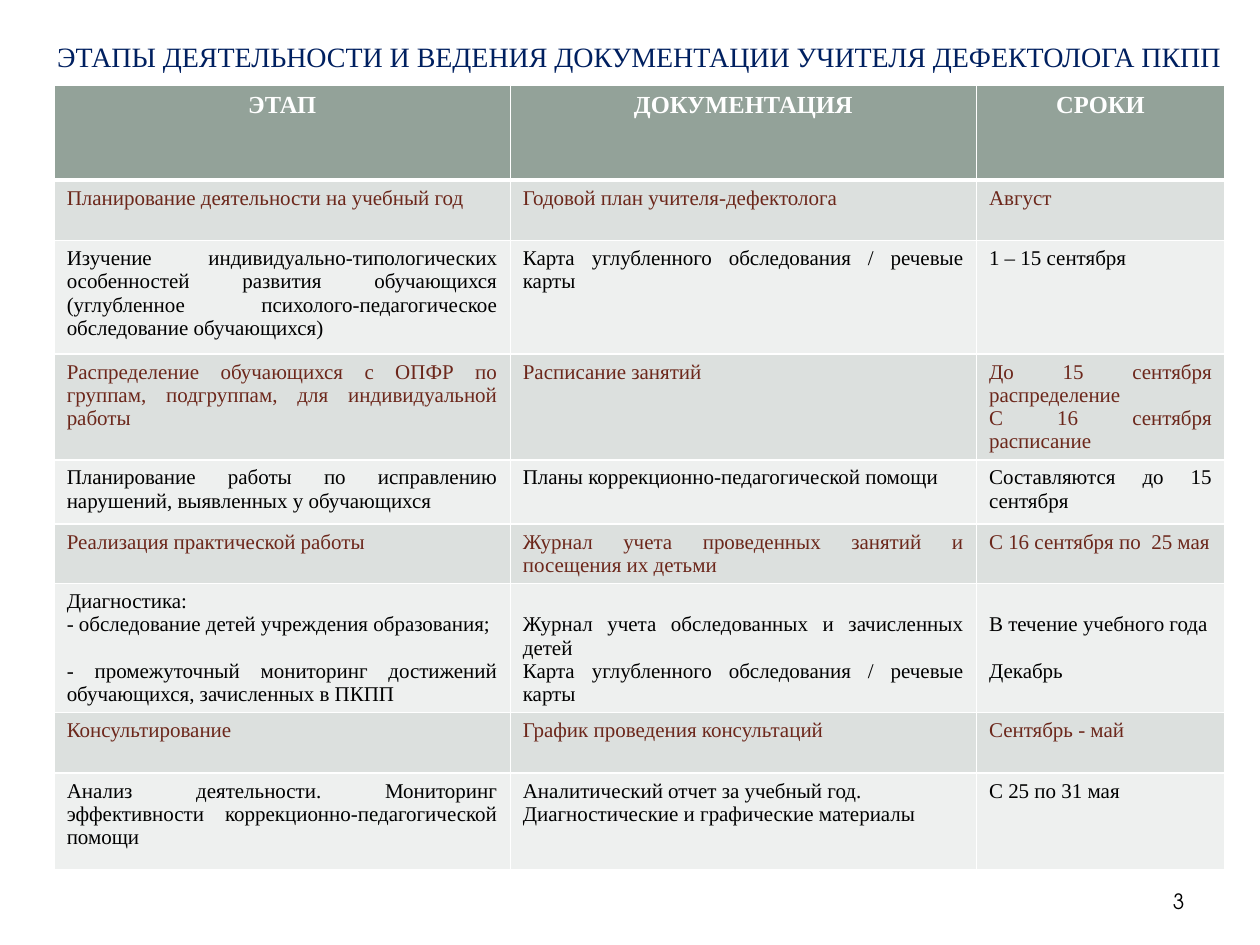
import pptx
import pptx.util
import pptx.dml.color
import pptx.enum.text
import pptx.oxml
import pptx.oxml.ns

Inches, Pt = pptx.util.Inches, pptx.util.Pt
RGBColor = pptx.dml.color.RGBColor
ALIGN = pptx.enum.text.PP_ALIGN
MIDDLE = pptx.enum.text.MSO_ANCHOR.MIDDLE

NAVY = RGBColor(0x00, 0x20, 0x60)
BLACK = RGBColor(0x00, 0x00, 0x00)
WHITE = RGBColor(0xFF, 0xFF, 0xFF)
BROWN = RGBColor(0x6C, 0x27, 0x1B)
SAGE = RGBColor(0x93, 0xA2, 0x99)
BAND_DARK = RGBColor(0xDC, 0xE0, 0xDE)
BAND_LIGHT = RGBColor(0xEE, 0xF0, 0xEF)
SERIF, SANS = "Times New Roman", "TeX Gyre Adventor"

# Content: each cell is a list of lines, GAP marks one line of empty space
GAP = None
TITLE = "ЭТАПЫ ДЕЯТЕЛЬНОСТИ И ВЕДЕНИЯ ДОКУМЕНТАЦИИ УЧИТЕЛЯ ДЕФЕКТОЛОГА ПКПП"
PAGE = "3"
COL_WIDTHS = [3.62, 3.7, 1.97]
ROWS = [  # height, cells
    (0.75, [["ЭТАП"], ["ДОКУМЕНТАЦИЯ"], ["СРОКИ"]]),
    (0.48, [["Планирование деятельности на учебный год"],
            ["Годовой план учителя-дефектолога"],
            ["Август"]]),
    (0.9, [["Изучение индивидуально-типологических особенностей развития обучающихся "
            "(углубленное психолого-педагогическое обследование обучающихся)"],
           ["Карта углубленного обследования / речевые карты"],
           ["1 – 15 сентября"]]),
    (0.7, [["Распределение обучающихся с ОПФР по группам, подгруппам, "
            "для индивидуальной работы"],
           ["Расписание занятий"],
           ["До 15 сентября распределение", "С 16 сентября расписание"]]),
    (0.51, [["Планирование работы по исправлению нарушений, выявленных у обучающихся"],
            ["Планы коррекционно-педагогической помощи"],
            ["Составляются до 15 сентября"]]),
    (0.47, [["Реализация практической работы"],
            ["Журнал учета проведенных занятий и посещения их детьми"],
            ["С 16 сентября по  25 мая"]]),
    (0.77, [["Диагностика:", "- обследование детей учреждения образования;", GAP,
             "- промежуточный мониторинг достижений обучающихся, зачисленных в ПКПП"],
            [GAP, "Журнал учета обследованных и зачисленных детей",
             "Карта углубленного обследования / речевые карты"],
            [GAP, "В течение учебного года", GAP, "Декабрь"]]),
    (0.48, [["Консультирование"],
            ["График проведения консультаций"],
            ["Сентябрь - май"]]),
    (0.77, [["Анализ деятельности. Мониторинг эффективности "
             "коррекционно-педагогической помощи"],
            ["Аналитический отчет за учебный год.",
             "Диагностические и графические материалы"],
            ["С 25 по 31 мая"]]),
]
LINE = Pt(13.3)  # height of one 12 pt line

HEADER = {"size": Pt(14), "name": SERIF, "bold": True}
BODY = {"size": Pt(12), "name": SERIF, "bold": False}


def add_text(p, text, align, color, fmt):
    p.alignment = align
    r = p.add_run()
    r.text = text
    for key, value in fmt.items():
        setattr(r.font, key, value)
    r.font.color.rgb = color


def set_borders(cell, widths):
    tcPr = cell._tc.get_or_add_tcPr()
    for side, width in widths.items():
        tcPr.append(pptx.oxml.parse_xml(
            f'<a:ln{side} {pptx.oxml.ns.nsdecls("a")} w="{Pt(width)}"><a:solidFill>'
            f'<a:srgbClr val="{WHITE}"/></a:solidFill></a:ln{side}>'))


def fill_cell(cell, lines, align, color, fmt):
    tf = cell.text_frame
    gap, started = False, False
    for line in lines:
        if line is GAP:
            gap = True
            continue
        p = tf.add_paragraph() if started else tf.paragraphs[0]
        if gap and started:
            p.space_before = LINE
        elif gap:
            cell.margin_top = Inches(0.05) + LINE
        add_text(p, line, align, color, fmt)
        gap, started = False, True


prs = pptx.Presentation()
prs.slide_width, prs.slide_height = Inches(10), Inches(7.5)
s = prs.slides.add_slide(prs.slide_layouts[5])

# Title
sp = s.shapes.title
sp.left, sp.top, sp.width, sp.height = map(Inches, (0.35, 0.21, 9.45, 0.47))
tf = sp.text_frame
tf.margin_left = tf.margin_right = Inches(0.05)
tf.vertical_anchor = MIDDLE
add_text(tf.paragraphs[0], TITLE, ALIGN.CENTER, NAVY, {"size": Pt(16), "name": SERIF})

# Table of stages
height = sum(h for h, _ in ROWS)
table = s.shapes.add_table(len(ROWS), len(COL_WIDTHS), Inches(0.43), Inches(0.68),
                           Inches(sum(COL_WIDTHS)), Inches(height)).table
for col, width in zip(table.columns, COL_WIDTHS):
    col.width = Inches(width)
for i, (row_height, cells) in enumerate(ROWS):
    table.rows[i].height = Inches(row_height)
    if i == 0:
        fill, style = SAGE, (ALIGN.CENTER, WHITE, HEADER)
    elif i % 2:
        fill, style = BAND_DARK, (ALIGN.JUSTIFY, BROWN, BODY)
    else:
        fill, style = BAND_LIGHT, (ALIGN.JUSTIFY, BLACK, BODY)
    for j, lines in enumerate(cells):
        cell = table.cell(i, j)
        set_borders(cell, {"L": 1, "R": 1, "T": 3 if i == 1 else 1, "B": 3 if i == 0 else 1})
        cell.fill.solid()
        cell.fill.fore_color.rgb = fill
        fill_cell(cell, lines, *style)

# Page number
tf = s.shapes.add_textbox(*map(Inches, (7.17, 6.95, 2.33, 0.4))).text_frame
tf.word_wrap = True
tf.vertical_anchor = MIDDLE
add_text(tf.paragraphs[0], PAGE, ALIGN.RIGHT, BLACK, {"size": Pt(12), "name": SANS})

prs.save("out.pptx")
